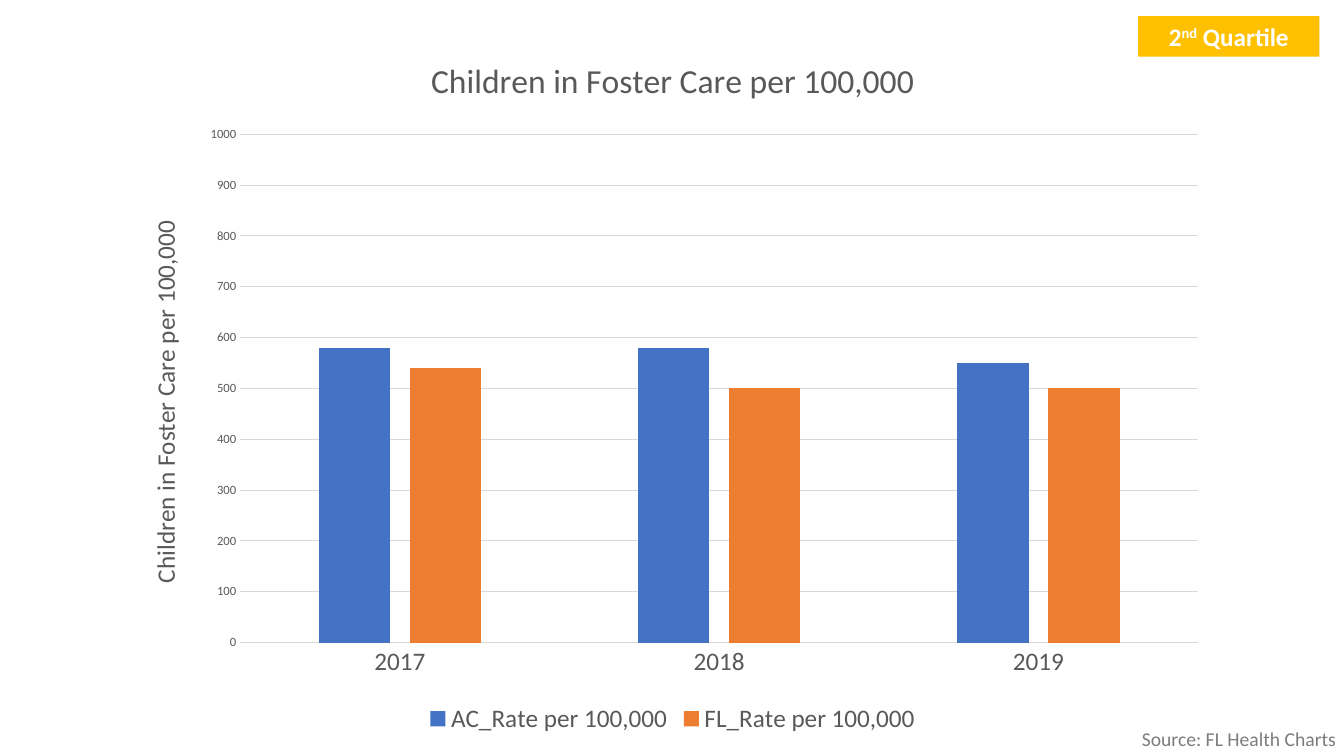
from dataclasses import dataclass

from pptx import Presentation
from pptx.chart.data import CategoryChartData as ChartData
from pptx.dml.color import RGBColor as Color
from pptx.enum.chart import XL_CHART_TYPE as ChartType
from pptx.enum.chart import XL_LEGEND_POSITION as LegendPosition
from pptx.enum.chart import XL_TICK_MARK as TickMark
from pptx.enum.shapes import MSO_SHAPE as Shape
from pptx.enum.text import MSO_ANCHOR as Anchor
from pptx.enum.text import PP_ALIGN as Align
from pptx.util import Pt


@dataclass(frozen=True)
class Theme:
    """Colours, font and type sizes of the slide."""
    font: str = "Calibri"
    ink: str = "595959"
    source: str = "7C7C7C"
    badge: str = "FFC000"
    badge_text: str = "FFFFFF"
    grid: str = "D9D9D9"
    bars: tuple = ("4472C4", "ED7D31")
    title_size: int = 24
    label_size: int = 18
    source_size: int = 14
    tick_size: int = 9
    line_width: float = 0.75


def apply(target, values):
    """Set every attribute in a dict of format values."""
    for name, value in values.items():
        setattr(target, name, value)


class SlideBuilder:
    """Draws elements on the current page in one theme."""

    def __init__(self, page, theme):
        """Keep the page and the theme."""
        self.page = page
        self.theme = theme

    def style_font(self, font, size, color, bold=False):
        """Give a font its face, size, weight and colour."""
        apply(font, {"name": self.theme.font, "size": Pt(size), "bold": bold})
        font.color.rgb = Color.from_string(color)

    def style_line(self, line):
        """Draw a thin grid-coloured line."""
        line.width = Pt(self.theme.line_width)
        line.color.rgb = Color.from_string(self.theme.grid)

    def add_span(self, para, text, size, color, bold=False):
        """Append a formatted run of text."""
        span = para.add_run()
        span.text = text
        self.style_font(span.font, size, color, bold)
        return span

    def add_source(self, text, frame):
        """Add the source note."""
        box = self.page.shapes.add_textbox(*map(Pt, frame))
        box.text_frame.word_wrap = True
        self.add_span(box.text_frame.paragraphs[0], text,
                      self.theme.source_size, self.theme.source)

    def add_badge(self, spans, frame):
        """Add a filled badge from pairs of text and baseline shift."""
        box = self.page.shapes.add_shape(Shape.RECTANGLE, *map(Pt, frame))
        box.shadow.inherit = False
        box.fill.solid()
        box.fill.fore_color.rgb = Color.from_string(self.theme.badge)
        box.line.fill.background()
        apply(box.text_frame, {"word_wrap": True, "vertical_anchor": Anchor.TOP})
        para = box.text_frame.paragraphs[0]
        para.alignment = Align.CENTER
        for text, baseline in spans:
            span = self.add_span(para, text, self.theme.label_size,
                                 self.theme.badge_text, True)
            if baseline:
                span.font._element.set("baseline", str(baseline))

    def add_title(self, owner, text, size):
        """Title a chart or an axis."""
        para = owner.text_frame.paragraphs[0]
        self.add_span(para, text, size, self.theme.ink)

    def add_columns(self, title, categories, series, frame):
        """Add a clustered column chart with a legend below."""
        theme = self.theme
        data = ChartData(number_format="0")
        data.categories = categories
        for name, values in series.items():
            data.add_series(name, values)
        chart = self.page.shapes.add_chart(
            ChartType.COLUMN_CLUSTERED, *map(Pt, frame), data).chart
        self.style_font(chart.font, theme.label_size, theme.ink)
        self.add_title(chart.chart_title, title, theme.title_size)
        chart.chart_title.include_in_layout = False
        plot = chart.plots[0]
        apply(plot, {"gap_width": 219, "overlap": -27, "vary_by_categories": False})
        for bars, color in zip(plot.series, theme.bars):
            bars.format.fill.solid()
            bars.format.fill.fore_color.rgb = Color.from_string(color)
        chart.has_legend = True
        apply(chart.legend, {"position": LegendPosition.BOTTOM,
                             "include_in_layout": False})
        self.style_font(chart.legend.font, theme.label_size, theme.ink)
        self.style_axes(chart, title)

    def style_axes(self, chart, title):
        """Format both axes and the gridlines."""
        theme = self.theme
        sizes = {chart.category_axis: theme.label_size,
                 chart.value_axis: theme.tick_size}
        for axis, size in sizes.items():
            apply(axis, {"major_tick_mark": TickMark.NONE,
                         "minor_tick_mark": TickMark.NONE})
            self.style_font(axis.tick_labels.font, size, theme.ink)
        self.style_line(chart.category_axis.format.line)
        scale = chart.value_axis
        apply(scale, {"minimum_scale": 0, "maximum_scale": 1000,
                      "major_unit": 100, "has_major_gridlines": True})
        apply(scale.tick_labels, {"number_format": "0",
                                  "number_format_is_linked": False})
        scale.format.line.fill.background()
        self.style_line(scale.major_gridlines.format.line)
        self.add_title(scale.axis_title, title, theme.label_size)


def main():
    """Build and save the deck."""
    deck = Presentation()
    apply(deck, {"slide_width": Pt(960), "slide_height": Pt(540)})
    page = deck.slides.add_slide(deck.slide_layouts[6])
    builder = SlideBuilder(page, Theme())
    builder.add_source("Source: FL Health Charts", (808.5, 515.5, 159, 24.5))
    builder.add_badge([("2", 0), ("nd", 30000), (" Quartile", 0)],
                      (813, 11.5, 129.5, 29))
    builder.add_columns(
        "Children in Foster Care per 100,000",
        ["2017", "2018", "2019"],
        {"AC_Rate per 100,000": (580, 580, 550),
         "FL_Rate per 100,000": (540, 500, 500)},
        (89.5, 23, 782, 505))
    deck.save("out.pptx")


if __name__ == "__main__":
    main()
